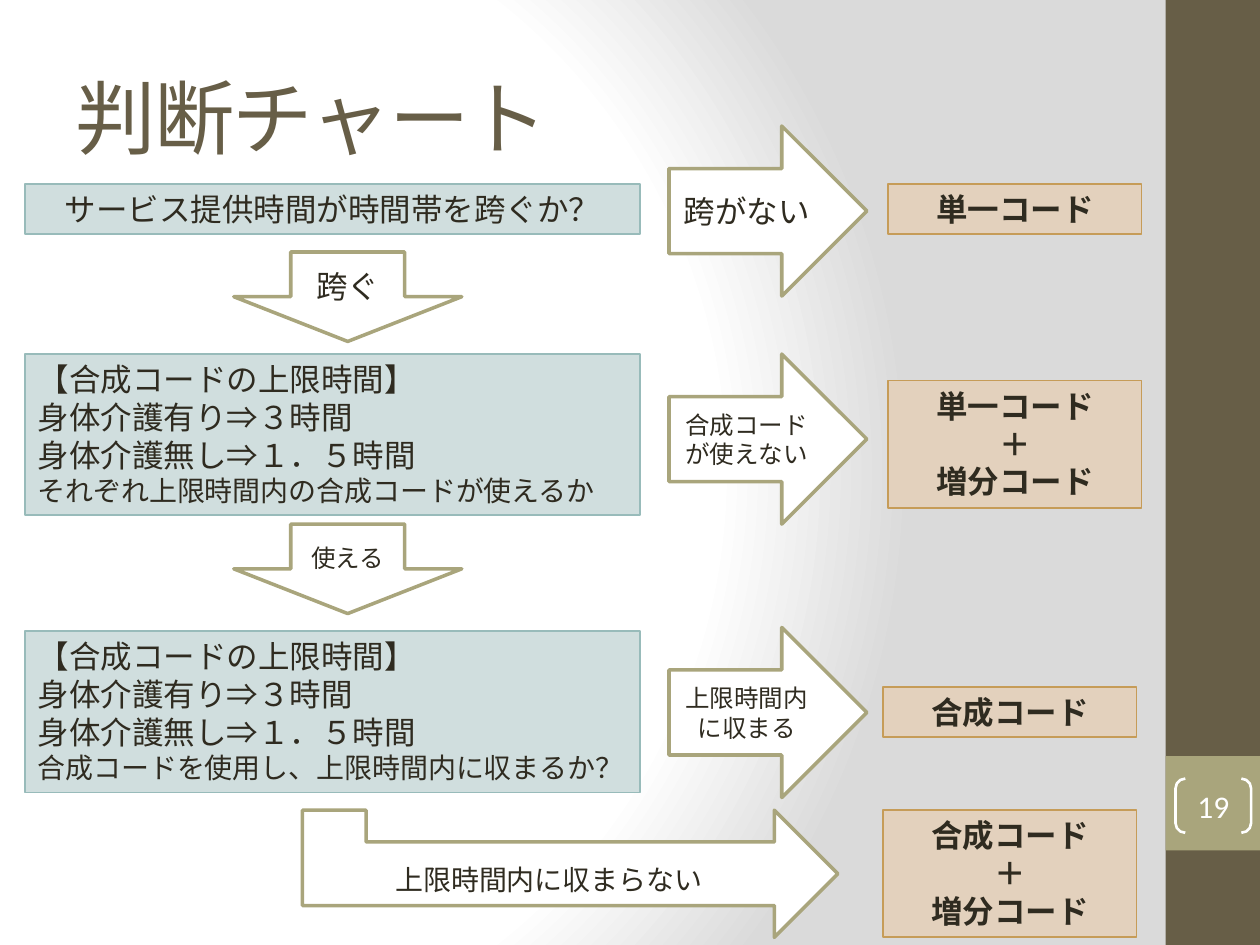
import collections

import lxml.etree
import pptx
import pptx.dml.color
import pptx.enum.shapes
import pptx.enum.text
import pptx.oxml
import pptx.oxml.ns
import pptx.util

COLORS = {
    "brown": "675E47", "olive": "A9A57C", "ink": "2F2B20", "white": "FFFFFF",
    "teal": "D0DEDE", "teal_line": "98BBBA",
    "sand": "E3D1BD", "sand_line": "C69C58", "grey": "DADADA",
}
SHAPES = pptx.enum.shapes.MSO_SHAPE
ALIGN = pptx.enum.text.PP_ALIGN
ANCHOR = pptx.enum.text.MSO_ANCHOR

# The slide is a grid of 100 columns by 75 rows of square cells
COLUMNS, ROWS = 100, 75
CELL = pptx.util.Inches(0.1)
Box = collections.namedtuple("Box", "col row cols rows")


def inside(outer, col, row, cols, rows):
    """Box at an offset from the corner of the outer box."""
    return Box(outer.col + col, outer.row + row, cols, rows)


def cells(box):
    return [round(value * CELL) for value in box]


def color(name):
    return pptx.dml.color.RGBColor.from_string(COLORS[name])


def write(shape, lines, size, align=ALIGN.CENTER, anchor=ANCHOR.MIDDLE,
          ink="ink", font="Calibri", bold=False, last_size=None):
    frame = shape.text_frame
    frame.text = "\n".join(lines)
    frame.word_wrap = True
    frame.vertical_anchor = anchor
    for para in frame.paragraphs:
        para.alignment = align
        for span in para.runs:
            span.font.size = pptx.util.Pt(size)
            span.font.name = font
            span.font.bold = bold
            span.font.color.rgb = color(ink)
    if last_size:
        frame.paragraphs[-1].runs[0].font.size = pptx.util.Pt(last_size)
    return frame


def add_shape(page, kind, box, fill=None, line=None, width=1.0):
    shape = page.shapes.add_shape(kind, *cells(box))
    shape.shadow.inherit = False
    if fill:
        shape.fill.solid()
        shape.fill.fore_color.rgb = color(fill)
    else:
        shape.fill.background()
    if line:
        shape.line.color.rgb = color(line)
        shape.line.width = pptx.util.Pt(width)
    else:
        shape.line.fill.background()
    return shape


def add_arrow(page, kind, box):
    return add_shape(page, kind, box, "white", "olive", 2)


def add_background(page):
    page.background.fill.gradient()
    gradient = page.background._cSld.find(".//" + pptx.oxml.ns.qn("a:gradFill"))
    for child in list(gradient):
        gradient.remove(child)
    stops = "".join(
        f'<a:gs pos="{share * 1000}"><a:srgbClr val="{COLORS[name]}"/></a:gs>'
        for share, name in [(0, "white"), (75, "white"), (100, "grey")])
    source = pptx.oxml.parse_xml(
        f'<a:gradFill {pptx.oxml.ns.nsdecls("a")}><a:gsLst>{stops}</a:gsLst>'
        '<a:path path="circle">'
        '<a:fillToRect l="20000" t="50000" r="100000" b="50000"/>'
        '</a:path></a:gradFill>')
    gradient.extend(list(source))


def add_sidebar(page, box):
    add_shape(page, SHAPES.RECTANGLE, box, "brown")
    add_shape(page, SHAPES.RECTANGLE, inside(box, 0, 60, box.cols, 7.5), "olive")
    bracket = add_shape(page, SHAPES.DOUBLE_BRACKET,
                        inside(box, 0.8, 61.8, 6, 4.3), None, "white", 1.5)
    bracket.adjustments[0] = 0.18
    frame = write(bracket, ["19"], 18, ink="white")
    frame.margin_left = frame.margin_right = 0
    frame.margin_top = frame.margin_bottom = 0


def add_title(page, box, text):
    title = page.shapes.add_textbox(*cells(box))
    frame = write(title, [text], 46, ALIGN.LEFT, ink="brown", font="Cambria")
    frame.paragraphs[0].runs[0].font._element.set("spc", "-100")


def add_outcome(page, box, lines):
    shape = add_shape(page, SHAPES.RECTANGLE, box, "sand", "sand_line")
    write(shape, lines, 18, anchor=ANCHOR.TOP, bold=True)


def add_stage(page, box, question, question_area, answer, answer_size,
              outcome, outcome_area):
    """Question at the left, arrow with its answer, outcome at the right.

    The question area is (row, rows), the outcome area (col, row, rows).
    """
    row, rows = question_area
    shape = add_shape(page, SHAPES.RECTANGLE, inside(box, 0, row, 48.8, rows),
                      "teal", "teal_line")
    single = len(question) == 1
    write(shape, question, 18, ALIGN.CENTER if single else ALIGN.LEFT,
          ANCHOR.TOP, last_size=None if single else 16)

    arrow = add_arrow(page, SHAPES.RIGHT_ARROW, inside(box, 51.1, 0, 15.7, box.rows))
    write(arrow, [answer], answer_size)

    col, row, rows = outcome_area
    add_outcome(page, inside(box, col, row, 20.1, rows), outcome)


def add_step_down(page, box, text, size):
    write(add_arrow(page, SHAPES.DOWN_ARROW, box), [text], size)


def add_last_branch(page, box):
    """Bent arrow from the last question to the bottom outcome."""
    length, thickness = 42.5, box.rows
    # The preset points up, so it is laid out upright and turned about its centre
    upright = inside(box, (length - thickness) / 2, (thickness - length) / 2,
                     thickness, length)
    arrow = add_arrow(page, SHAPES.BENT_UP_ARROW, upright)
    arrow.rotation = 90
    for index in range(3):
        arrow.adjustments[index] = 0.5
    label = page.shapes.add_textbox(*cells(inside(box, 6.4, 3.7, 26.7, 6.4)))
    frame = write(label, ["上限時間内に収まらない"], 16, ALIGN.LEFT, ANCHOR.TOP)
    frame.word_wrap = False
    add_outcome(page, inside(box, 46.1, 0, 20.1, thickness),
                ["合成コード", "＋", "増分コード"])


def main():
    deck = pptx.Presentation()
    deck.slide_width, deck.slide_height = COLUMNS * CELL, ROWS * CELL
    page = deck.slides.add_slide(deck.slide_layouts[6])

    add_background(page)
    add_sidebar(page, Box(92.5, 0, 7.5, ROWS))
    add_title(page, Box(5, 3, 83.3, 12.5), "判断チャート")

    # Three questions, from top to bottom
    limits = ["【合成コードの上限時間】", "身体介護有り⇒３時間", "身体介護無し⇒１．５時間"]
    stages = [
        (10, ["サービス提供時間が時間帯を跨ぐか？"], (4.6, 4),
         "跨がない", 18, ["単一コード"], (68.5, 4.6, 4)),
        (28.1, limits + ["それぞれ上限時間内の合成コードが使えるか"], (0, 12.8),
         "合成コードが使えない", 14, ["単一コード", "＋", "増分コード"], (68.5, 2.1, 10.1)),
        (49.8, limits + ["合成コードを使用し、上限時間内に収まるか？"], (0.3, 12.8),
         "上限時間内に収まる", 14, ["合成コード"], (68.1, 4.7, 4)),
    ]
    for top, *content in stages:
        add_stage(page, Box(2, top, 88.6, 13.5), *content)

    # Steps between the questions
    for top, text, size in [(20, "跨ぐ", 18), (41.6, "使える", 14)]:
        add_step_down(page, Box(18.55, top, 18.1, 7.1), text, size)

    add_last_branch(page, Box(24, 64.3, 66.2, 10.1))
    deck.save("out.pptx")


if __name__ == "__main__":
    main()
